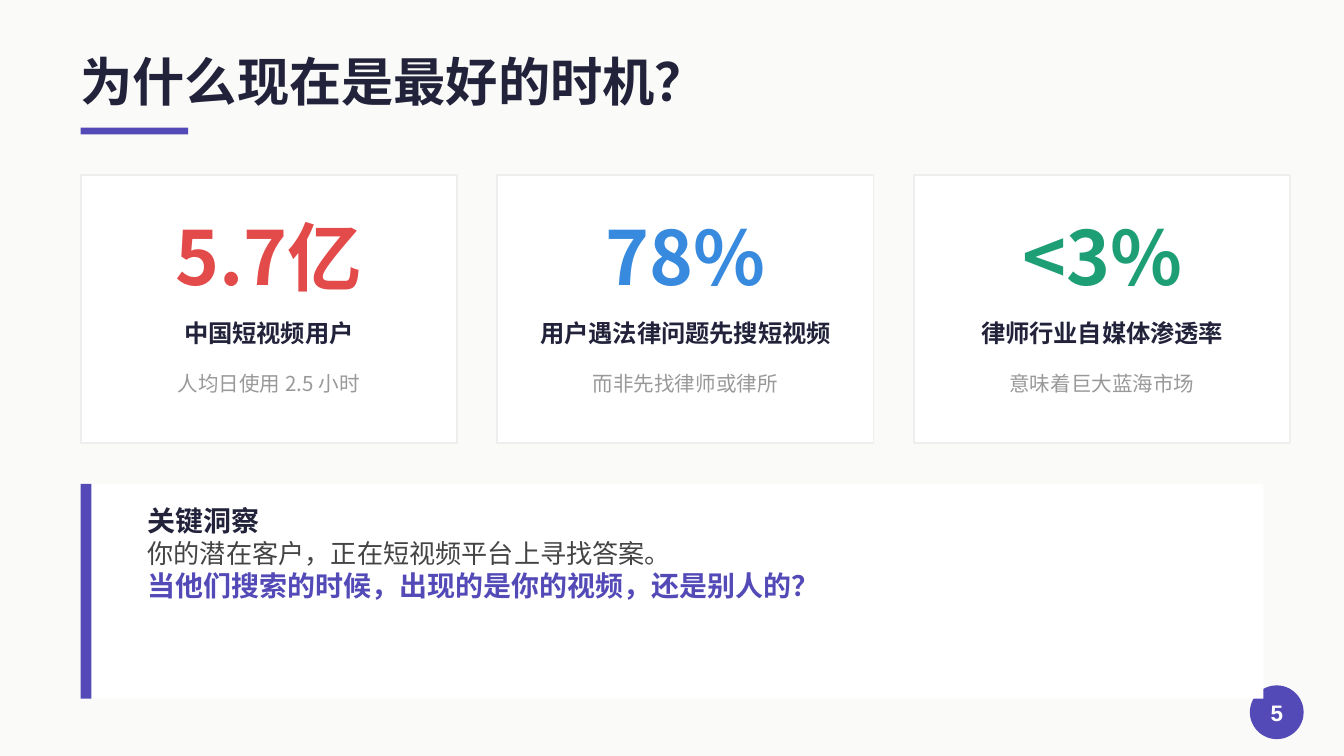
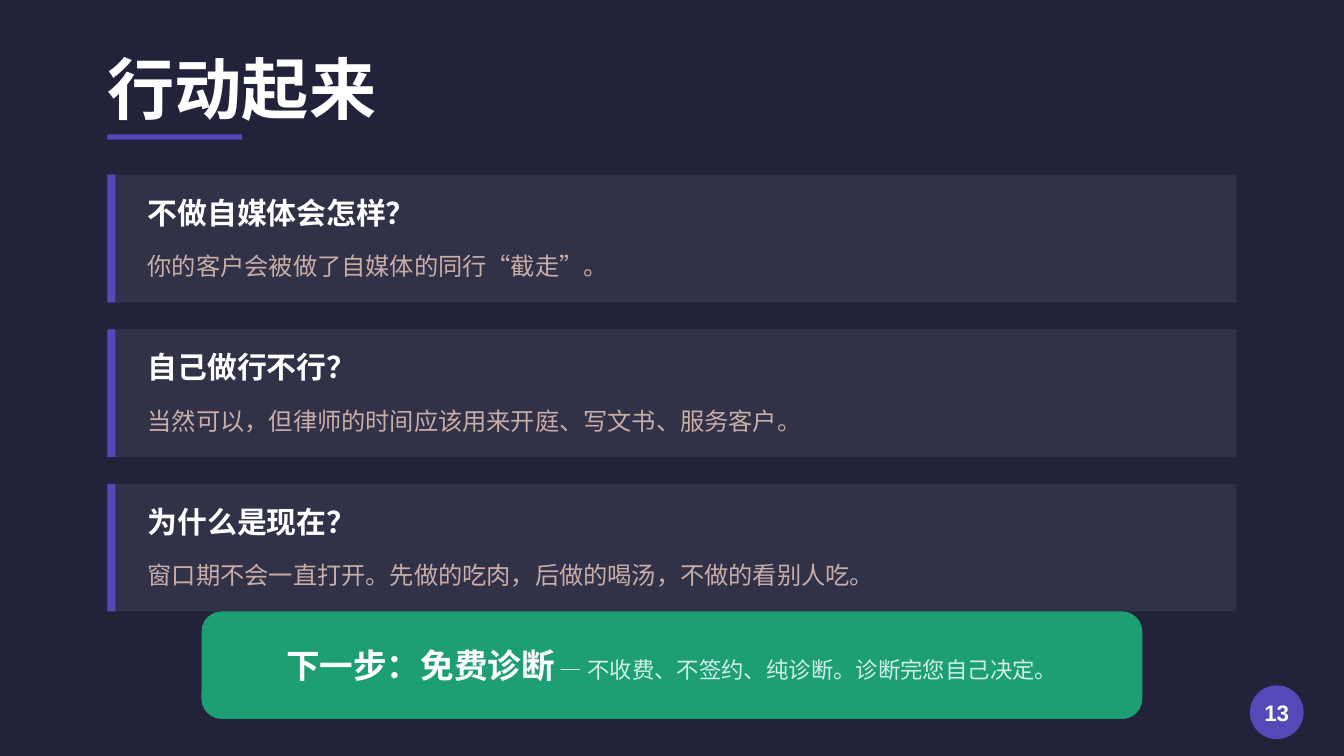
from dataclasses import dataclass

from lxml import etree
from pptx import Presentation
from pptx.dml.color import RGBColor
from pptx.enum.shapes import MSO_SHAPE
from pptx.enum.text import MSO_ANCHOR, MSO_AUTO_SIZE, PP_ALIGN
from pptx.oxml.ns import qn
from pptx.util import Inches, Pt

RECT, OVAL, ROUNDED = MSO_SHAPE.RECTANGLE, MSO_SHAPE.OVAL, MSO_SHAPE.ROUNDED_RECTANGLE
LEFT, CENTER = PP_ALIGN.LEFT, PP_ALIGN.CENTER
TOP, MIDDLE = MSO_ANCHOR.TOP, MSO_ANCHOR.MIDDLE
NO_AUTOFIT = MSO_AUTO_SIZE.NONE
TITLE_ONLY = 5


@dataclass(frozen=True)
class Theme:
    font: str = "Noto Sans CJK SC"
    number_font: str = "Arial"
    paper: str = "FAFAF8"
    ink: str = "22223B"
    white: str = "FFFFFF"
    accent: str = "534AB7"
    red: str = "E24B4A"
    blue: str = "378ADD"
    green: str = "1D9E75"
    border: str = "EEEEEE"
    body: str = "444444"
    muted: str = "999999"
    rose: str = "C9ADA7"
    mint: str = "D0F0E8"
    title_size: int = 28
    closing_title_size: int = 36
    figure_size: int = 40
    call_size: int = 18
    question_size: int = 16
    insight_size: int = 15
    text_size: int = 14
    label_size: int = 13
    small_size: int = 12
    note_size: int = 11


THEME = Theme()


def rgb(value):
    return RGBColor.from_string(value)


def add_box(slide, box, fill, kind=RECT, line=None, opacity=None):
    shape = slide.shapes.add_shape(kind, *map(Inches, box))
    shape.shadow.inherit = False
    shape.fill.solid()
    shape.fill.fore_color.rgb = rgb(fill)
    if opacity is not None:
        color = shape.fill._xPr.find(qn("a:solidFill"))[0]
        etree.SubElement(color, qn("a:alpha")).set("val", str(opacity * 1000))
    if line:
        shape.line.color.rgb = rgb(line)
        shape.line.width = Pt(1)
    else:
        shape.line.fill.background()
    return shape


def add_text_area(slide, box):
    return slide.shapes.add_textbox(*map(Inches, box))


def write(shape, *runs, align=LEFT, anchor=MIDDLE, inset=None, font=THEME.font):
    """Fill a shape with (text, size, color, bold) runs; a closing newline breaks the line."""
    frame = shape.text_frame
    frame.word_wrap = True
    frame.auto_size = NO_AUTOFIT
    frame.vertical_anchor = anchor
    if inset is not None:
        frame.margin_left = frame.margin_right = Inches(inset)
        frame.margin_top = frame.margin_bottom = Inches(inset)
    paragraph = frame.paragraphs[0]
    paragraph.alignment = align
    for text, size, color, bold in runs:
        run = paragraph.add_run()
        run.text = text.rstrip("\n")
        run.font.size = Pt(size)
        run.font.bold = bold
        run.font.color.rgb = rgb(color)
        run.font.name = font
        east_asian = etree.SubElement(run.font._element, qn("a:ea"))
        east_asian.set("typeface", font)
        if text.endswith("\n"):
            paragraph.add_line_break()


def add_slide(deck, background):
    slide = deck.slides.add_slide(deck.slide_layouts[TITLE_ONLY])
    slide.background.fill.solid()
    slide.background.fill.fore_color.rgb = rgb(background)
    return slide


def add_title(slide, text, box, size, color, underline):
    """Place the title; underline is its (top, width, height)."""
    title = slide.shapes.title
    title.left, title.top, title.width, title.height = map(Inches, box)
    write(title, (text, size, color, True), inset=0)
    top, width, height = underline
    add_box(slide, (box[0], top, width, height), THEME.accent)


def add_page_number(slide, number):
    badge = add_box(slide, (9.3, 5.1, 0.4, 0.4), THEME.accent, OVAL)
    write(badge, (str(number), THEME.small_size, THEME.white, True),
          align=CENTER, inset=0, font=THEME.number_font)


def add_barred_panel(slide, box, bar_width, opacity=None):
    left, top, _, height = box
    add_box(slide, box, THEME.white, opacity=opacity)
    add_box(slide, (left, top, bar_width, height), THEME.accent)


def add_stat_card(slide, box, figure, label, note, color):
    left, top, width, _ = box
    add_box(slide, box, THEME.white, line=THEME.border)
    rows = (
        (0.15, 0.9, (figure, THEME.figure_size, color, True)),
        (1.0, 0.35, (label, THEME.label_size, THEME.ink, True)),
        (1.4, 0.3, (note, THEME.note_size, THEME.muted, False)),
    )
    for offset, height, run in rows:
        area = add_text_area(slide, (left, top + offset, width, height))
        write(area, run, align=CENTER)


def add_insight(slide, box, heading, statement, question):
    left, top, width, height = box
    add_barred_panel(slide, box, 0.08)
    area = add_text_area(slide, (left + 0.4, top + 0.1, width - 0.7, height - 0.2))
    write(area,
          (heading + "\n", THEME.insight_size, THEME.ink, True),
          (statement + "\n", THEME.text_size, THEME.body, False),
          (question, THEME.insight_size, THEME.accent, True),
          anchor=TOP)


def add_question(slide, box, question, answer):
    left, top, width, _ = box
    add_barred_panel(slide, box, 0.06, opacity=7)
    lines = (
        (question, THEME.question_size, THEME.white, True),
        (answer, THEME.label_size, THEME.rose, False),
    )
    for row, run in enumerate(lines):
        area = add_text_area(slide, (left + 0.3, top + 0.08 + 0.4 * row, width - 0.6, 0.4))
        write(area, run, inset=0)


def add_call_to_action(slide, box, call, detail):
    button = add_box(slide, box, THEME.green, ROUNDED)
    button.adjustments[0] = 0.15 / box[3]
    write(button,
          (call, THEME.call_size, THEME.white, True),
          (detail, THEME.small_size, THEME.mint, False),
          align=CENTER)


def build_timing_slide(deck):
    slide = add_slide(deck, THEME.paper)
    add_title(slide, "为什么现在是最好的时机？", (0.6, 0.3, 8.4, 0.6),
              THEME.title_size, THEME.ink, (0.95, 0.8, 0.05))
    add_page_number(slide, 5)
    stats = (
        ("5.7亿", "中国短视频用户", "人均日使用 2.5 小时", THEME.red),
        ("78%", "用户遇法律问题先搜短视频", "而非先找律师或律所", THEME.blue),
        ("<3%", "律师行业自媒体渗透率", "意味着巨大蓝海市场", THEME.green),
    )
    width, gap = 2.8, 0.3
    for column, stat in enumerate(stats):
        add_stat_card(slide, (0.6 + column * (width + gap), 1.3, width, 2), *stat)
    add_insight(slide, (0.6, 3.6, 8.8, 1.6), "关键洞察",
                "你的潜在客户，正在短视频平台上寻找答案。",
                "当他们搜索的时候，出现的是你的视频，还是别人的？")


def build_action_slide(deck):
    slide = add_slide(deck, THEME.ink)
    add_page_number(slide, 13)
    add_title(slide, "行动起来", (0.8, 0.3, 8.4, 0.7),
              THEME.closing_title_size, THEME.white, (1, 1, 0.04))
    questions = (
        ("不做自媒体会怎样？", "你的客户会被做了自媒体的同行“截走”。"),
        ("自己做行不行？", "当然可以，但律师的时间应该用来开庭、写文书、服务客户。"),
        ("为什么是现在？", "窗口期不会一直打开。先做的吃肉，后做的喝汤，不做的看别人吃。"),
    )
    height, gap = 0.95, 0.2
    for row, entry in enumerate(questions):
        add_question(slide, (0.8, 1.3 + row * (height + gap), 8.4, height), *entry)
    add_call_to_action(slide, (1.5, 4.55, 7, 0.8), "下一步：免费诊断",
                       " — 不收费、不签约、纯诊断。诊断完您自己决定。")


def main():
    deck = Presentation()
    deck.slide_width = Inches(10)
    deck.slide_height = Inches(10 * 9 / 16)
    build_timing_slide(deck)
    build_action_slide(deck)
    deck.save("out.pptx")


if __name__ == "__main__":
    main()
